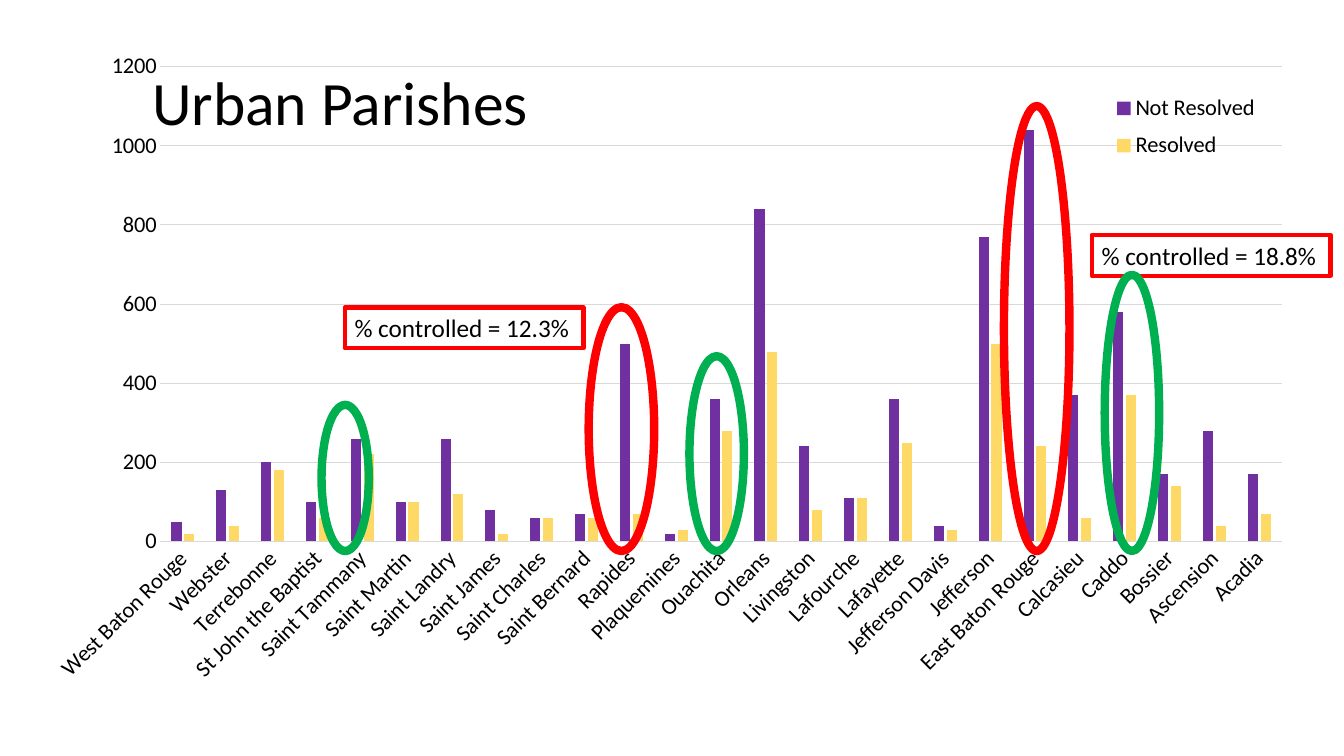
from dataclasses import dataclass
from lxml.etree import SubElement
from pptx import Presentation
from pptx.chart.data import CategoryChartData
from pptx.dml.color import RGBColor
from pptx.enum.chart import XL_CHART_TYPE, XL_LEGEND_POSITION, XL_TICK_MARK
from pptx.enum.shapes import MSO_SHAPE
from pptx.enum.text import MSO_ANCHOR, PP_ALIGN
from pptx.oxml import parse_xml
from pptx.oxml.ns import nsdecls, qn
from pptx.util import Pt


@dataclass(frozen=True)
class Theme:
    font: str = "Calibri"
    text: str = "000000"
    grid: str = "D9D9D9"
    not_resolved: str = "7030A0"
    resolved: str = "FFD966"
    low: str = "FF0000"
    high: str = "00B050"
    title_size: int = 44
    callout_size: int = 18
    chart_size: int = 16


THEME = Theme()
TITLE = "Urban Parishes"
PARISHES = [
    ("West Baton Rouge", 50, 20),
    ("Webster", 130, 40),
    ("Terrebonne", 200, 180),
    ("St John the Baptist", 100, 60),
    ("Saint Tammany", 260, 220),
    ("Saint Martin", 100, 100),
    ("Saint Landry", 260, 120),
    ("Saint James", 80, 20),
    ("Saint Charles", 60, 60),
    ("Saint Bernard", 70, 60),
    ("Rapides", 500, 70),
    ("Plaquemines", 20, 30),
    ("Ouachita", 360, 280),
    ("Orleans", 840, 480),
    ("Livingston", 240, 80),
    ("Lafourche", 110, 110),
    ("Lafayette", 360, 250),
    ("Jefferson Davis", 40, 30),
    ("Jefferson", 770, 500),
    ("East Baton Rouge", 1040, 240),
    ("Calcasieu", 370, 60),
    ("Caddo", 580, 370),
    ("Bossier", 170, 140),
    ("Ascension", 280, 40),
    ("Acadia", 170, 70),
]
SERIES = [("Not Resolved", THEME.not_resolved), ("Resolved", THEME.resolved)]
RINGS = [
    (420.5, 46.8, 174.2, THEME.low),
    (717.1, 46.8, 317.8, THEME.low),
    (229.7, 33.8, 104.4, THEME.high),
    (492.5, 38.9, 139.2, THEME.high),
    (789.1, 38.9, 197.3, THEME.high),
]
RING_BOTTOM = 393.6
CALLOUTS = [("% controlled = 18.8%", 779.8, 167.8), ("% controlled = 12.3%", 246.2, 219.6)]
CALLOUT_WIDTH, CALLOUT_HEIGHT = 170.6, 29.1
PLOT_AREA = {"x": 0.102, "y": 0.039, "w": 0.878, "h": 0.677}
LEGEND_AREA = {"x": 0.84, "y": 0.065, "w": 0.13, "h": 0.12}


def style_font(font, size):
    font.name = THEME.font
    font.size = Pt(size)
    font.bold = False
    font.color.rgb = RGBColor.from_string(THEME.text)


def style_line(line, color, width):
    line.color.rgb = RGBColor.from_string(color)
    line.width = Pt(width)


def place_part(part, index, area, inner=False):
    for old in part.findall(qn("c:layout")):
        part.remove(old)
    layout = parse_xml(f"<c:layout {nsdecls('c')}><c:manualLayout/></c:layout>")
    settings = [("layoutTarget", "inner")] if inner else []
    settings += [("xMode", "edge"), ("yMode", "edge"), *area.items()]
    for tag, value in settings:
        SubElement(layout[0], qn(f"c:{tag}")).set("val", str(value))
    part.insert(index, layout)


def add_title(slide):
    title = slide.shapes.title
    title.left, title.top, title.width, title.height = Pt(101.5), Pt(37.4), Pt(751), Pt(76.3)
    title.text_frame.text = TITLE
    title.text_frame.vertical_anchor = MSO_ANCHOR.MIDDLE
    heading = title.text_frame.paragraphs[0]
    heading.alignment = PP_ALIGN.LEFT
    heading.line_spacing = 0.9
    style_font(heading.runs[0].font, THEME.title_size)


def add_parish_chart(slide):
    names, *columns = zip(*PARISHES)
    counts = CategoryChartData(number_format="General")
    counts.categories = names
    for (label, _), values in zip(SERIES, columns):
        counts.add_series(label, values)
    chart = slide.shapes.add_chart(
        XL_CHART_TYPE.COLUMN_CLUSTERED, Pt(21.6), Pt(28.1), Pt(912.2), Pt(501.1), counts
    ).chart
    chart.has_title = False
    style_font(chart.font, THEME.chart_size)

    bars = chart.plots[0]
    bars.gap_width, bars.overlap, bars.vary_by_categories = 219, -27, False
    for series, (_, color) in zip(bars.series, SERIES):
        series.format.fill.solid()
        series.format.fill.fore_color.rgb = RGBColor.from_string(color)

    parish_axis, count_axis = chart.category_axis, chart.value_axis
    for axis in (parish_axis, count_axis):
        axis.major_tick_mark = axis.minor_tick_mark = XL_TICK_MARK.NONE
        style_font(axis.tick_labels.font, THEME.chart_size)
    style_line(parish_axis.format.line, THEME.grid, 0.75)
    parish_axis._element.find(qn("c:txPr")).find(qn("a:bodyPr")).set("rot", "-2700000")
    count_axis.format.line.fill.background()
    count_axis.minimum_scale, count_axis.maximum_scale, count_axis.major_unit = 0, 1200, 200
    style_line(count_axis.major_gridlines.format.line, THEME.grid, 0.75)

    chart.has_legend = True
    chart.legend.position = XL_LEGEND_POSITION.BOTTOM
    chart.legend.include_in_layout = False
    style_font(chart.legend.font, THEME.chart_size)
    place_part(chart.legend._element, 1, LEGEND_AREA)
    place_part(chart._chartSpace.chart.plotArea, 0, PLOT_AREA, inner=True)


def add_outline(slide, preset, left, top, width, height, color, weight):
    outline = slide.shapes.add_shape(preset, Pt(left), Pt(top), Pt(width), Pt(height))
    outline.shadow.inherit = False
    outline.fill.background()
    style_line(outline.line, color, weight)
    return outline


def add_callout(slide, label, left, top):
    callout = add_outline(
        slide, MSO_SHAPE.RECTANGLE, left, top, CALLOUT_WIDTH, CALLOUT_HEIGHT, THEME.low, 3
    )
    frame = callout.text_frame
    frame.text = label
    frame.word_wrap = False
    frame.vertical_anchor = MSO_ANCHOR.TOP
    frame.paragraphs[0].alignment = PP_ALIGN.LEFT
    style_font(frame.paragraphs[0].runs[0].font, THEME.callout_size)


def main():
    deck = Presentation()
    deck.slide_width, deck.slide_height = Pt(960), Pt(540)
    slide = deck.slides.add_slide(deck.slide_layouts[5])
    add_title(slide)
    add_parish_chart(slide)
    for label, left, top in CALLOUTS:
        add_callout(slide, label, left, top)
    for left, width, height, color in RINGS:
        add_outline(slide, MSO_SHAPE.OVAL, left, RING_BOTTOM - height, width, height, color, 6)
    deck.save("out.pptx")


if __name__ == "__main__":
    main()
